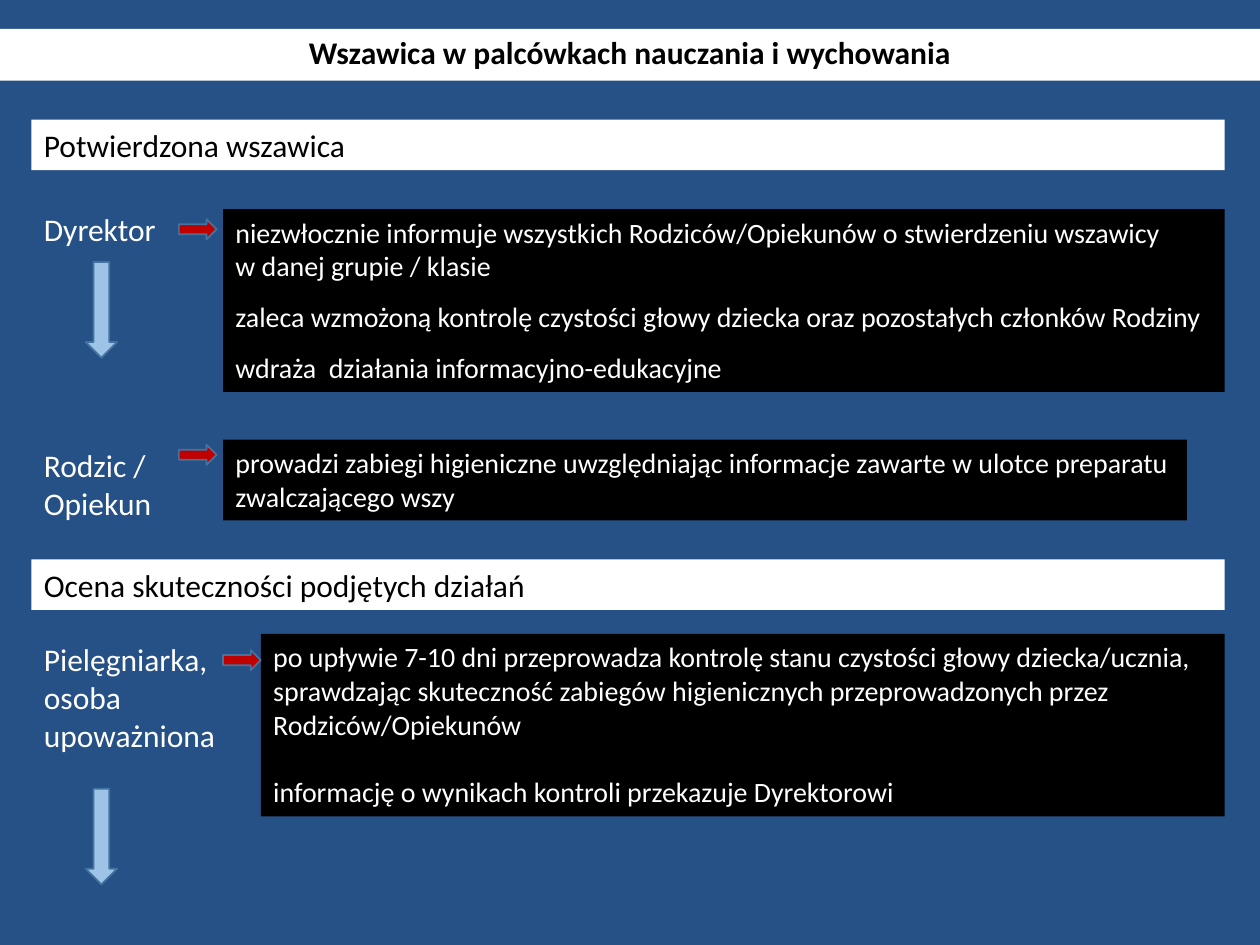
from pptx import Presentation
from pptx.dml.color import RGBColor
from pptx.enum import shapes, text
from pptx.util import Inches, Pt

TITLE = "Wszawica w palcówkach nauczania i wychowania"
LEFT, RIGHT = 0.25, 9.72
HEADING_HEIGHT = 0.4
WHITE, BLACK, BLUE = "FFFFFF", "000000", "265186"
RED, PALE_BLUE, OUTLINE = "C00000", "9DC3E6", "43739E"

# heading, top
HEADINGS = [
    ("Potwierdzona wszawica", 0.95),
    ("Ocena skuteczności podjętych działań", 4.44),
]
# role: name, (top, width, height); duties: paragraphs, (left, top, right, height), gap in points
STEPS = [
    dict(role="Dyrektor", role_box=(1.62, 1.11, 0.4),
         duties=["niezwłocznie informuje wszystkich Rodziców/Opiekunów o stwierdzeniu wszawicy\v"
                 "w danej grupie / klasie",
                 "zaleca wzmożoną kontrolę czystości głowy dziecka oraz pozostałych członków Rodziny",
                 "wdraża  działania informacyjno-edukacyjne"],
         duties_box=(1.77, 1.66, RIGHT, 1.45), gap=9.75, pointer=(1.42, 1.74), next_top=2.08),
    dict(role="Rodzic / Opiekun", role_box=(3.49, 1.17, 0.71),
         duties=["prowadzi zabiegi higieniczne uwzględniając informacje zawarte w ulotce preparatu "
                 "zwalczającego wszy"],
         duties_box=(1.77, 3.49, 9.42, 0.64), gap=0, pointer=(1.42, 3.53), next_top=None),
    dict(role="Pielęgniarka, osoba upoważniona", role_box=(5.03, 1.61, 1.01),
         duties=["po upływie 7-10 dni przeprowadza kontrolę stanu czystości głowy dziecka/ucznia, "
                 "sprawdzając skuteczność zabiegów higienicznych przeprowadzonych przez "
                 "Rodziców/Opiekunów",
                 "informację o wynikach kontroli przekazuje Dyrektorowi"],
         duties_box=(2.07, 5.03, RIGHT, 1.45), gap=19.5, pointer=(1.77, 5.16), next_top=6.26),
]


def paint(fill, color):
    fill.solid()
    fill.fore_color.rgb = RGBColor.from_string(color)


def write(shape, paragraphs, size, color, gap=0, bold=False, align=text.PP_ALIGN.LEFT):
    frame = shape.text_frame
    frame.word_wrap = True
    frame.vertical_anchor = text.MSO_ANCHOR.TOP
    for i, content in enumerate(paragraphs):
        paragraph = frame.add_paragraph() if i else frame.paragraphs[0]
        paragraph.text = content
        paragraph.alignment = align
        paragraph.space_before = Pt(gap if i else 0)
        for run in paragraph.runs:
            for name, value in dict(name="Calibri", size=Pt(size), bold=bold).items():
                setattr(run.font, name, value)
            run.font.color.rgb = RGBColor.from_string(color)


def add_block(slide, kind, box, fill, outline=None):
    block = slide.shapes.add_shape(kind, *map(Inches, box))
    block.shadow.inherit = False
    paint(block.fill, fill)
    if outline:
        paint(block.line.fill, outline)
        block.line.width = Pt(1)
    else:
        block.line.fill.background()
    return block


def main():
    deck = Presentation()
    deck.slide_width, deck.slide_height = Inches(10), Inches(7.5)
    slide = deck.slides.add_slide(deck.slide_layouts[5])
    paint(slide.background.fill, BLUE)
    kinds = shapes.MSO_SHAPE

    title = slide.shapes.title
    for name, value in dict(left=0, top=0.23, width=10, height=0.41).items():
        setattr(title, name, Inches(value))
    paint(title.fill, WHITE)
    write(title, [TITLE], 18, BLACK, bold=True, align=text.PP_ALIGN.CENTER)
    title.text_frame.vertical_anchor = text.MSO_ANCHOR.MIDDLE
    title.text_frame.paragraphs[0].line_spacing = 0.9

    for heading, top in HEADINGS:
        bar = add_block(slide, kinds.RECTANGLE, (LEFT, top, RIGHT - LEFT, HEADING_HEIGHT), WHITE)
        write(bar, [heading], 18, BLACK)

    for step in STEPS:
        top, width, height = step["role_box"]
        role = slide.shapes.add_textbox(*map(Inches, (LEFT, top, width, height)))
        write(role, [step["role"]], 18, WHITE)

        left, top, right, height = step["duties_box"]
        duties = add_block(slide, kinds.RECTANGLE, (left, top, right - left, height), BLACK)
        write(duties, step["duties"], 16, WHITE, gap=step["gap"])

        add_block(slide, kinds.RIGHT_ARROW, (*step["pointer"], 0.3, 0.16), RED, OUTLINE)
        if step["next_top"]:
            add_block(slide, kinds.DOWN_ARROW, (0.68, step["next_top"], 0.25, 0.76),
                      PALE_BLUE, OUTLINE)

    deck.save("out.pptx")


if __name__ == "__main__":
    main()
